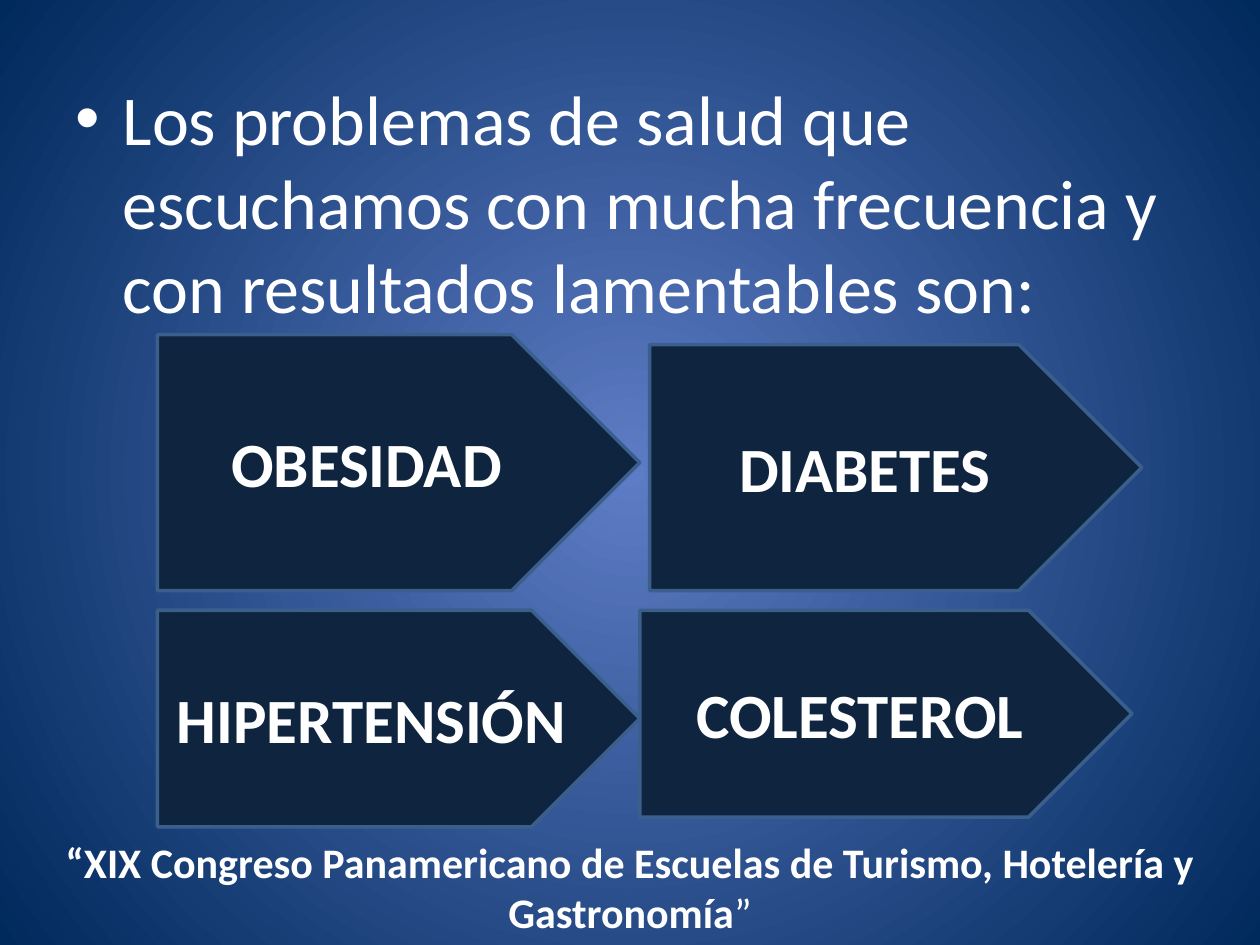
from lxml import etree
from pptx import Presentation
from pptx.dml.color import RGBColor
from pptx.enum.shapes import MSO_SHAPE
from pptx.enum.text import MSO_ANCHOR, PP_ALIGN
from pptx.oxml.ns import qn
from pptx.util import Pt

PENTAGON = MSO_SHAPE.PENTAGON
MIDDLE, TOP = MSO_ANCHOR.MIDDLE, MSO_ANCHOR.TOP
CENTER, LEFT = PP_ALIGN.CENTER, PP_ALIGN.LEFT

# Content: text runs are (text, bold); places are left, top, width, height
WIDTH, HEIGHT = 720, 540
GLOW, NIGHT = "5E7CC5", "00295C"
WHITE, ARROW_FILL, ARROW_LINE = "FFFFFF", "0F243E", "3A5F8C"

INTRO = [("Los problemas de salud que escuchamos con mucha frecuencia "
          "y con resultados lamentables son:", False)]
INTRO_PLACE = (36, 39.6, 648, 140.4)
INTRO_INDENT = 27

FOOTER = [("“XIX Congreso Panamericano de Escuelas de Turismo, Hotelería "
           "y Gastronomía", True), ("”", False)]
FOOTER_PLACE = (0, 474.5, WIDTH, 65.5)

PROBLEMS = [
    ("OBESIDAD", (90, 191.25, 275.63, 146.25)),
    ("DIABETES", (371.25, 196.88, 281.25, 140.62)),
    ("HIPERTENSIÓN", (90, 348.75, 275.63, 123.75)),
    ("COLESTEROL", (365.63, 348.75, 281.25, 118.13)),
]


def color(value):
    return RGBColor.from_string(value)


def apply(target, values):
    for name, value in values.items():
        setattr(target, name, value)


def write(shape, spans, size, align, anchor):
    frame = shape.text_frame
    apply(frame, {"word_wrap": True, "vertical_anchor": anchor})
    para = frame.paragraphs[0]
    para.alignment = align
    for text, bold in spans:
        span = para.add_run()
        span.text = text
        apply(span.font, {"name": "Calibri", "size": Pt(size), "bold": bold})
        span.font.color.rgb = color(WHITE)
    return para


def add_text(page, place, spans, size, align):
    box = page.shapes.add_textbox(*map(Pt, place))
    return write(box, spans, size, align, TOP)


def add_arrow(page, label, place):
    arrow = page.shapes.add_shape(PENTAGON, *map(Pt, place))
    arrow.shadow.inherit = False
    arrow.fill.solid()
    arrow.fill.fore_color.rgb = color(ARROW_FILL)
    arrow.line.color.rgb = color(ARROW_LINE)
    arrow.line.width = Pt(2)
    write(arrow, [(label, True)], 36, CENTER, MIDDLE)


def paint_background(page):
    fill = page.background.fill
    fill.gradient()
    for stop, value in zip(fill.gradient_stops, (GLOW, NIGHT)):
        stop.color.rgb = color(value)
    # Turn the linear gradient into a circular one around the centre
    gradient = page.element.find(".//" + qn("a:gradFill"))
    linear = gradient.find(qn("a:lin"))
    circle = etree.Element(qn("a:path"), path="circle")
    etree.SubElement(circle, qn("a:fillToRect"),
                     {side: "50000" for side in "ltrb"})
    gradient.replace(linear, circle)


def add_bullet(para, indent):
    properties = para._p.get_or_add_pPr()
    properties.set("marL", str(Pt(indent)))
    properties.set("indent", str(-Pt(indent)))
    before = etree.SubElement(properties, qn("a:spcBef"))
    etree.SubElement(before, qn("a:spcPct"), val="20000")
    etree.SubElement(properties, qn("a:buFont"), typeface="Arial")
    etree.SubElement(properties, qn("a:buChar"), char="•")


def main():
    deck = Presentation()
    apply(deck, {"slide_width": Pt(WIDTH), "slide_height": Pt(HEIGHT)})
    page = deck.slides.add_slide(deck.slide_layouts[6])
    paint_background(page)

    # Footer and introduction
    add_text(page, FOOTER_PLACE, FOOTER, 24, CENTER)
    add_bullet(add_text(page, INTRO_PLACE, INTRO, 40, LEFT), INTRO_INDENT)

    # Health problems
    for label, place in PROBLEMS:
        add_arrow(page, label, place)

    deck.save("out.pptx")


if __name__ == "__main__":
    main()
